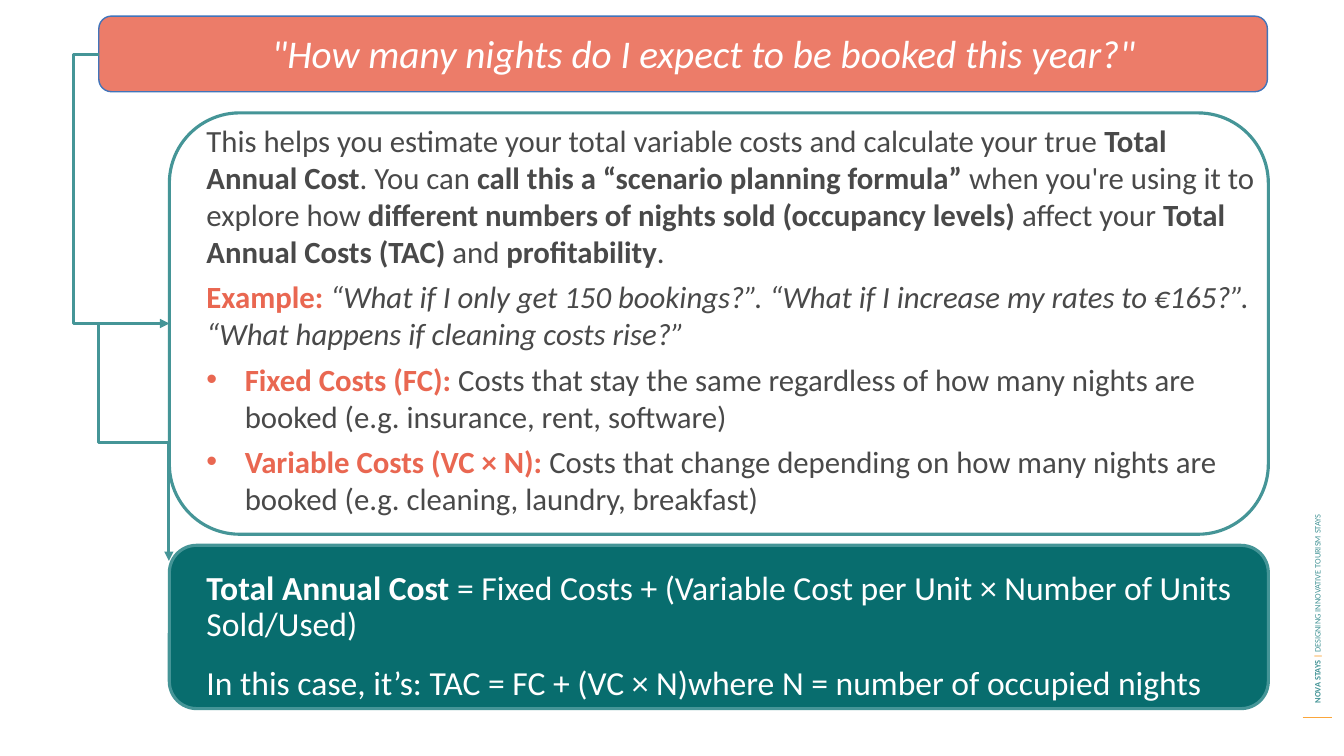
from dataclasses import dataclass, field

from lxml.etree import SubElement
from pptx import Presentation
from pptx.dml.color import RGBColor
from pptx.enum.shapes import MSO_CONNECTOR, MSO_SHAPE
from pptx.enum.text import MSO_ANCHOR, PP_ALIGN
from pptx.oxml.ns import qn
from pptx.util import Inches, Pt


@dataclass(frozen=True)
class Theme:
    font: str = "Calibri"
    white: str = "FFFFFF"
    ink: str = "494949"
    coral: str = "E96751"
    banner: str = "EC7C69"
    banner_edge: str = "4174BA"
    teal: str = "459597"
    deep_teal: str = "086D6E"
    amber: str = "FBA63B"
    question_size: float = 28
    body_size: float = 22
    formula_size: float = 24
    footer_size: float = 6
    edge: float = 2.25


THEME = Theme()


@dataclass(frozen=True)
class Run:
    text: str
    color: str
    bold: bool = False
    italic: bool = False


@dataclass(frozen=True)
class Para:
    runs: list[Run]
    bullet: bool = False
    formats: dict = field(default_factory=dict)


@dataclass(frozen=True)
class Copy:
    box: tuple[float, float, float, float]
    size: float
    paras: list[Para]
    rotation: float = 0
    anchor: MSO_ANCHOR = MSO_ANCHOR.TOP


@dataclass(frozen=True)
class Panel:
    box: tuple[float, float, float, float]
    fill: str | None
    edge: str
    width: float


@dataclass(frozen=True)
class Link:
    start: tuple[float, float]
    end: tuple[float, float]
    color: str
    width: float
    kind: MSO_CONNECTOR = MSO_CONNECTOR.STRAIGHT
    rotation: int = 0
    bend: float | None = None


def apply(target, formats: dict) -> None:
    for name, value in formats.items():
        setattr(target, name, value)


def draw_panel(slide, panel: Panel) -> None:
    shape = slide.shapes.add_shape(
        MSO_SHAPE.FLOWCHART_ALTERNATE_PROCESS, *map(Inches, panel.box))
    shape.shadow.inherit = False
    if panel.fill:
        shape.fill.solid()
        shape.fill.fore_color.rgb = RGBColor.from_string(panel.fill)
    else:
        shape.fill.background()
    shape.line.color.rgb = RGBColor.from_string(panel.edge)
    shape.line.width = Pt(panel.width)


def draw_link(slide, link: Link) -> None:
    connector = slide.shapes.add_connector(
        link.kind, *map(Inches, link.start + link.end))
    connector.line.color.rgb = RGBColor.from_string(link.color)
    connector.line.width = Pt(link.width)
    properties = connector._element.spPr
    SubElement(properties, qn("a:effectLst"))
    if link.bend is not None:
        properties.find(qn("a:xfrm")).set("rot", str(link.rotation * 60000))
        guides = properties.find(qn("a:prstGeom")).find(qn("a:avLst"))
        SubElement(guides, qn("a:gd"), name="adj1",
                   fmla=f"val {round(link.bend * 100000)}")
        SubElement(properties.find(qn("a:ln")), qn("a:tailEnd"), type="triangle")


def add_bullet(paragraph) -> None:
    properties = paragraph._p.get_or_add_pPr()
    indent = Inches(0.38)
    properties.set("marL", str(indent))
    properties.set("indent", str(-indent))
    SubElement(properties, qn("a:buFont"), typeface="Arial")
    SubElement(properties, qn("a:buChar"), char="•")


def draw_copy(slide, copy: Copy) -> None:
    textbox = slide.shapes.add_textbox(*map(Inches, copy.box))
    textbox.rotation = copy.rotation
    frame = textbox.text_frame
    apply(frame, {"word_wrap": True, "vertical_anchor": copy.anchor})
    for index, para in enumerate(copy.paras):
        paragraph = frame.add_paragraph() if index else frame.paragraphs[0]
        apply(paragraph, para.formats)
        if para.bullet:
            add_bullet(paragraph)
        for part in para.runs:
            run = paragraph.add_run()
            run.text = part.text
            apply(run.font, {"name": THEME.font, "size": Pt(copy.size),
                             "bold": part.bold, "italic": part.italic})
            run.font.color.rgb = RGBColor.from_string(part.color)


def plain(text: str) -> Run:
    return Run(text, THEME.ink)


def strong(text: str) -> Run:
    return Run(text, THEME.ink, bold=True)


def lead(text: str) -> Run:
    return Run(text, THEME.coral, bold=True)


AFTER = {"space_after": Pt(6)}
TIGHT = AFTER | {"line_spacing": 0.9}

PANELS = [
    Panel((1.68, 5.41, 10.9, 1.62), THEME.deep_teal, THEME.teal, THEME.edge),
    Panel((0.98, 0.16, 11.59, 0.75), THEME.banner, THEME.banner_edge, 1),
    Panel((1.68, 1.12, 10.9, 4.18), None, THEME.teal, THEME.edge),
]

LINKS = [
    Link((12.92, 7.12), (13.21, 7.12), THEME.amber, 0.75),
    Link((1.68, 3.21), (0.98, 0.54), THEME.teal, THEME.edge,
         MSO_CONNECTOR.ELBOW, 180, -0.356),
    Link((2.5, 4.04), (0.15, 4.74), THEME.teal, THEME.edge,
         MSO_CONNECTOR.ELBOW, 270, 0.5),
]

COPIES = [
    Copy((10.18, 4.09, 5.77, 0.2), THEME.footer_size, [Para([
        Run("NOVA STAYS ", THEME.teal, bold=True),
        Run("| ", THEME.amber, bold=True),
        Run("DESIGNING INNOVATIVE TOURISM STAYS", THEME.teal),
    ])], 270, MSO_ANCHOR.MIDDLE),
    Copy((1.17, 0.29, 11.61, 0.88), THEME.question_size, [Para([
        Run('"How many nights do I expect to be booked this year?"',
            THEME.white, italic=True),
    ], formats=TIGHT | {"alignment": PP_ALIGN.CENTER})]),
    Copy((1.95, 1.16, 10.63, 0.88), THEME.body_size, [
        Para([
            plain("This helps you estimate your total variable costs and calculate your true "),
            strong("Total Annual Cost"),
            plain(". You can "),
            strong("call this a “scenario planning formula”"),
            plain(" when you're using it to explore how "),
            strong("different numbers of nights sold (occupancy levels)"),
            plain(" affect your "),
            strong("Total Annual Costs (TAC)"),
            plain(" and "),
            strong("profitability"),
            plain("."),
        ], formats=AFTER),
        Para([
            lead("Example: "),
            Run("“What if I only get 150 bookings?”. “What if I increase my rates to €165?”. "
                "“What happens if cleaning costs rise?”", THEME.ink, italic=True),
        ], formats=AFTER),
        Para([
            lead("Fixed Costs (FC): "),
            plain("Costs that stay the same regardless of how many nights are booked "
                  "(e.g. insurance, rent, software)"),
        ], True, AFTER),
        Para([
            lead("Variable Costs (VC × N): "),
            plain("Costs that change depending on how many nights are booked "
                  "(e.g. cleaning, laundry, breakfast)"),
        ], True, AFTER),
    ]),
    Copy((1.95, 5.62, 10.63, 0.88), THEME.formula_size, [
        Para([
            Run("Total Annual Cost ", THEME.white, bold=True),
            Run("= Fixed Costs + (Variable Cost per Unit × Number of Units Sold/Used)",
                THEME.white),
        ], formats=TIGHT),
        Para([
            Run("In this case, it’s: TAC = FC + (VC × N)where N = number of occupied nights",
                THEME.white),
        ], formats=TIGHT | {"space_before": Pt(10)}),
    ]),
]


def main() -> None:
    deck = Presentation()
    apply(deck, {"slide_width": Inches(13.33), "slide_height": Inches(7.5)})
    slide = deck.slides.add_slide(deck.slide_layouts[6])
    for draw, parts in ((draw_panel, PANELS), (draw_link, LINKS), (draw_copy, COPIES)):
        for part in parts:
            draw(slide, part)
    deck.save("out.pptx")


if __name__ == "__main__":
    main()
